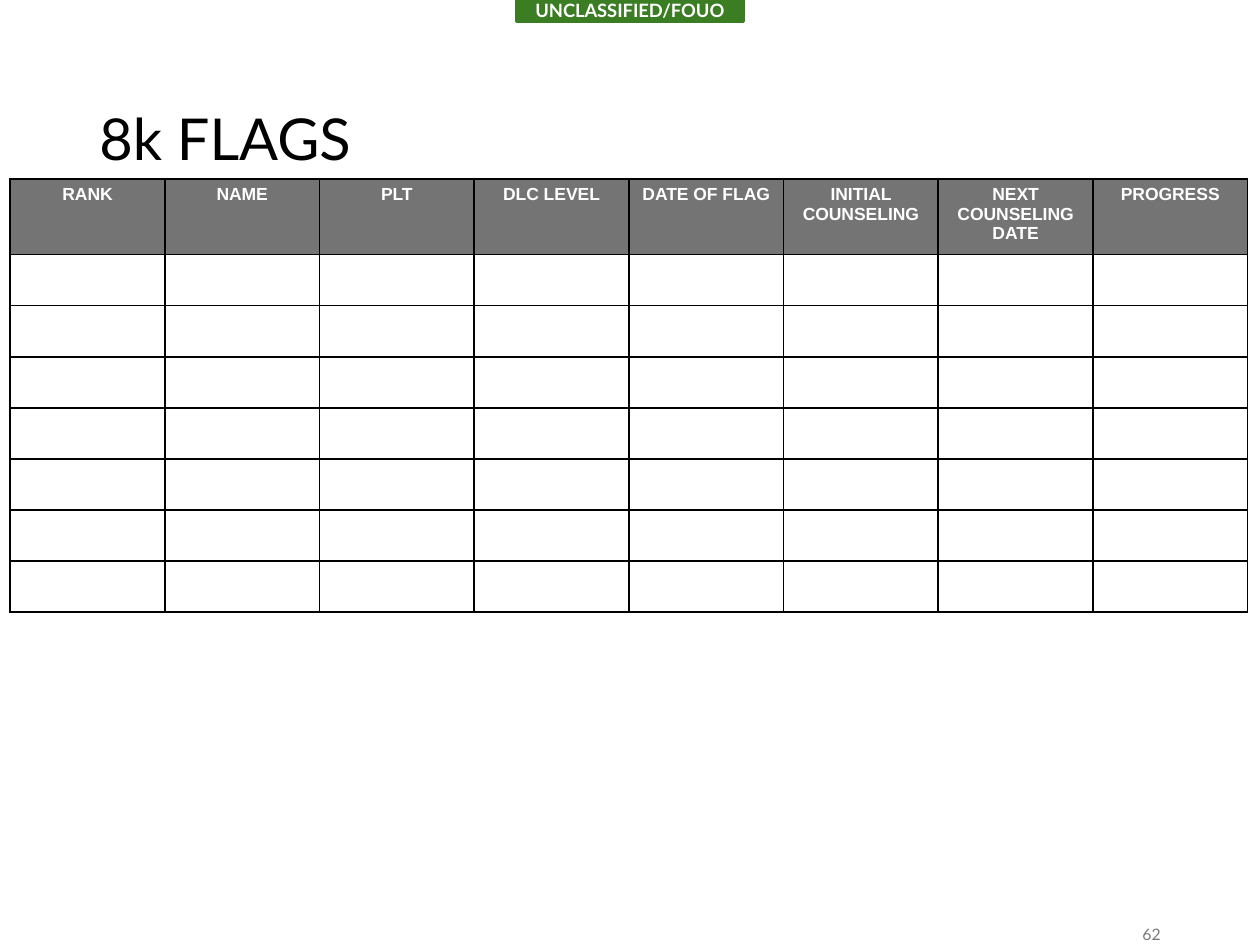
"""Build the FLAGS tracking slide with its blank roster table."""
from lxml import etree
from pptx import Presentation
from pptx import util as u
from pptx.dml import color
from pptx.enum import shapes, text
from pptx.oxml import ns

Pt = u.Pt
COLORS = {"green": "3B7D23", "white": "FFFFFF", "black": "000000",
          "header": "747474", "number": "797979"}
HEADERS = ["RANK", "NAME", "PLT", "DLC LEVEL", "DATE OF FLAG",
           "INITIAL COUNSELING", "NEXT COUNSELING DATE", "PROGRESS"]
BLANK_ROWS = 7
COLUMN_WIDTH, HEADER_HEIGHT, ROW_HEIGHT = 88.4, 41.1, 29.2


def rgb(name):
    return color.RGBColor.from_string(COLORS[name])


def write(frame, words, ink, alignment, **font_values):
    frame.word_wrap = True
    paragraph = frame.paragraphs[0]
    paragraph.alignment = alignment
    run = paragraph.add_run()
    run.text = words
    for name, value in font_values.items():
        setattr(run.font, name, value)
    run.font.color.rgb = rgb(ink)
    return paragraph


presentation = Presentation()
presentation.slide_width, presentation.slide_height = Pt(720), Pt(540)
slide = presentation.slides.add_slide(presentation.slide_layouts[6])

banner = slide.shapes.add_shape(shapes.MSO_SHAPE.RECTANGLE, Pt(295.2), Pt(0), Pt(129.6), Pt(12.2))
banner.shadow.inherit = False
banner.fill.solid()
banner.fill.fore_color.rgb = rgb("green")
banner.line.color.rgb = rgb("green")
banner.line.width = Pt(1.5)
banner.text_frame.margin_top = banner.text_frame.margin_bottom = 0
banner.text_frame.vertical_anchor = text.MSO_ANCHOR.MIDDLE
write(banner.text_frame, "UNCLASSIFIED/FOUO", "white", text.PP_ALIGN.CENTER,
      name="Lato", size=Pt(10.5), bold=True)

title = slide.shapes.add_textbox(Pt(49.7), Pt(28.8), Pt(620.6), Pt(104.4))
title.text_frame.vertical_anchor = text.MSO_ANCHOR.MIDDLE
heading = write(title.text_frame, "8k FLAGS", "black", text.PP_ALIGN.LEFT,
                name="Lato", size=Pt(33))
heading.line_spacing = 0.9

table = slide.shapes.add_table(
    BLANK_ROWS + 1, len(HEADERS), Pt(5.8), Pt(102.2), Pt(COLUMN_WIDTH * len(HEADERS)),
    Pt(HEADER_HEIGHT + BLANK_ROWS * ROW_HEIGHT)).table
for column in table.columns:
    column.width = Pt(COLUMN_WIDTH)
for index, row in enumerate(table.rows):
    row.height = Pt(ROW_HEIGHT if index else HEADER_HEIGHT)
    for cell in row.cells:
        properties = cell._tc.get_or_add_tcPr()
        for side in ("lnL", "lnR", "lnT", "lnB"):
            border = etree.SubElement(properties, ns.qn(f"a:{side}"), w=str(Pt(1)))
            fill = etree.SubElement(border, ns.qn("a:solidFill"))
            etree.SubElement(fill, ns.qn("a:srgbClr"), val=COLORS["black"])
        if index:
            cell.fill.background()
        else:
            cell.fill.solid()
            cell.fill.fore_color.rgb = rgb("header")
for cell, label in zip(table.rows[0].cells, HEADERS):
    write(cell.text_frame, label, "white", text.PP_ALIGN.CENTER,
          name="Arial", size=Pt(10), bold=True)

page_number = slide.shapes.add_textbox(Pt(508.3), Pt(528.5), Pt(162), Pt(10.8))
page_number.text_frame.margin_top = page_number.text_frame.margin_bottom = 0
page_number.text_frame.vertical_anchor = text.MSO_ANCHOR.MIDDLE
write(page_number.text_frame, "62", "number", text.PP_ALIGN.RIGHT, name="Lato", size=Pt(9))

presentation.save("out.pptx")
